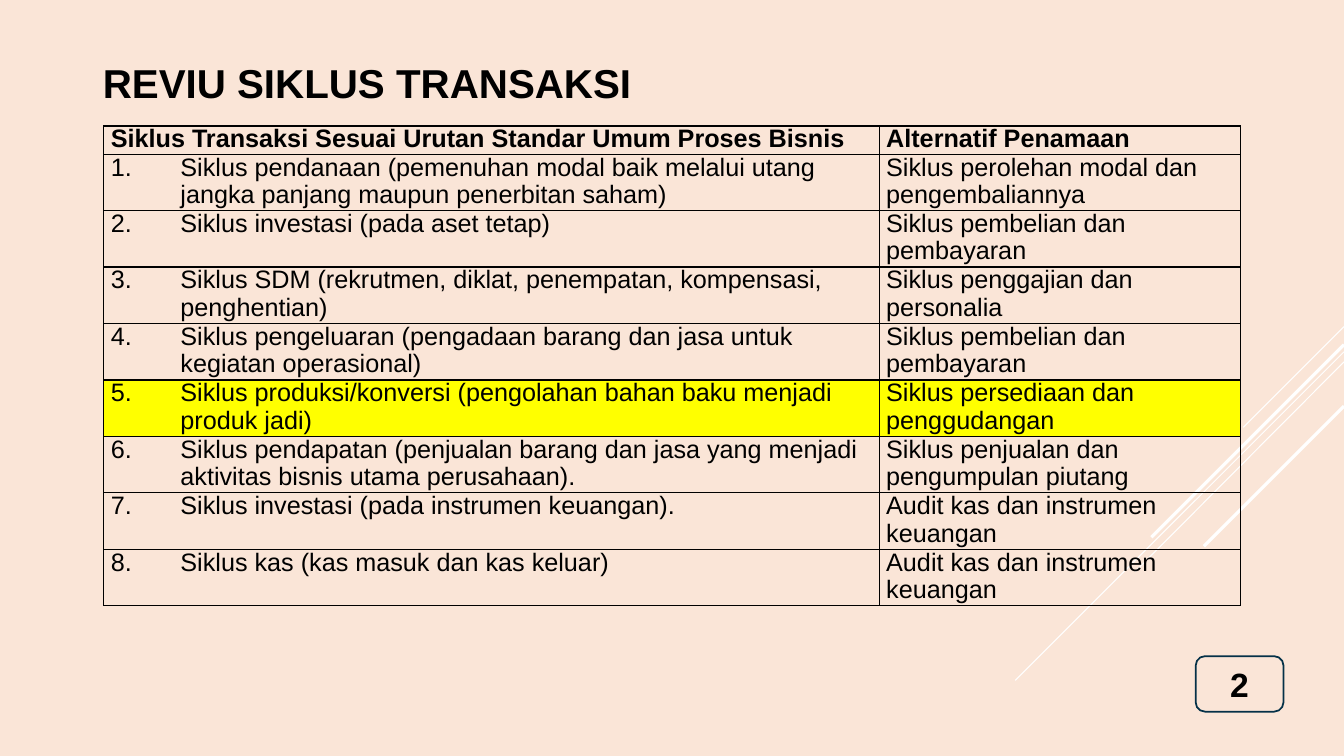
"""Build the slide reviewing the transaction cycles."""
from lxml.etree import SubElement
from pptx import Presentation
from pptx.dml.color import RGBColor
from pptx.enum.shapes import MSO_CONNECTOR as Connector, MSO_SHAPE as Shape
from pptx.enum.text import MSO_ANCHOR as Anchor, PP_ALIGN as Align
from pptx.oxml import parse_xml
from pptx.oxml.ns import nsdecls, qn
from pptx.util import Inches, Pt

COLORS = {
    "background": "FAE5D7",
    "ray": "FFFFFF",
    "badge line": "043148",
    "text": "000000",
    "highlight": "FFFF00",
}
HEADINGS = ("Siklus Transaksi Sesuai Urutan Standar Umum Proses Bisnis", "Alternatif Penamaan")
CYCLES = [
    ("Siklus pendanaan (pemenuhan modal baik melalui utang jangka panjang maupun penerbitan saham)",
     "Siklus perolehan modal dan pengembaliannya"),
    ("Siklus investasi (pada aset tetap)", "Siklus pembelian dan pembayaran"),
    ("Siklus SDM (rekrutmen, diklat, penempatan, kompensasi, penghentian)",
     "Siklus penggajian dan personalia"),
    ("Siklus pengeluaran (pengadaan barang dan jasa untuk kegiatan operasional)",
     "Siklus pembelian dan pembayaran"),
    ("Siklus produksi/konversi (pengolahan bahan baku menjadi produk jadi)",
     "Siklus persediaan dan penggudangan"),
    ("Siklus pendapatan (penjualan barang dan jasa yang menjadi aktivitas bisnis utama perusahaan).",
     "Siklus penjualan dan pengumpulan piutang"),
    ("Siklus investasi (pada instrumen keuangan).", "Audit kas dan instrumen keuangan"),
    ("Siklus kas (kas masuk dan kas keluar)", "Audit kas dan instrumen keuangan"),
]
HIGHLIGHTED_CYCLE = 5
RAYS = [
    (3.24, 12.33, 4.24, 0.75),
    (3.49, 10.07, 6.75, 0.75),
    (3.59, 11.26, 5.67, 0.75),
    (3.42, 11.42, 5.33, 2.25),
    (4.03, 11.94, 5.42, 2.25),
]


def color(name):
    return RGBColor.from_string(COLORS[name])


def style(paragraph, size, bold):
    font = paragraph.font
    font.name, font.size, font.bold = "Arial", Pt(size), bold
    font.color.rgb = color("text")


deck = Presentation()
deck.slide_width, deck.slide_height = Inches(13.33), Inches(7.5)
slide = deck.slides.add_slide(deck.slide_layouts[5])
slide.background.fill.solid()
slide.background.fill.fore_color.rgb = color("background")

for start_y, end_x, end_y, width in RAYS:
    ray = slide.shapes.add_connector(
        Connector.STRAIGHT, Inches(13.33), Inches(start_y), Inches(end_x), Inches(end_y))
    ray.line.color.rgb = color("ray")
    ray.line.width = Pt(width)
    SubElement(ray._element.spPr, qn("a:effectLst"))

page_badge = slide.shapes.add_shape(
    Shape.ROUNDED_RECTANGLE, Inches(11.86), Inches(6.51), Inches(0.87), Inches(0.55))
page_badge.shadow.inherit = False
page_badge.fill.solid()
page_badge.fill.fore_color.rgb = color("background")
page_badge.line.color.rgb = color("badge line")
page_badge.line.width = Pt(1.25)
page_badge.text_frame.text = "2"
page_badge.text_frame.vertical_anchor = Anchor.MIDDLE
page_number = page_badge.text_frame.paragraphs[0]
page_number.alignment = Align.CENTER
style(page_number, 24, True)

title = slide.shapes.title
title.left, title.top = Inches(0.92), Inches(0.51)
title.width, title.height = Inches(7.09), Inches(0.61)
title.text_frame.text = "REVIU SIKLUS TRANSAKSI"
title.text_frame.vertical_anchor = Anchor.MIDDLE
heading = title.text_frame.paragraphs[0]
heading.alignment = Align.LEFT
style(heading, 28.8, True)

rows = [HEADINGS, *CYCLES]
cycle_table = slide.shapes.add_table(
    len(rows), 2, Inches(1.03), Inches(1.25), Inches(11.27), Inches(4.76)).table
cycle_table.first_row = cycle_table.horz_banding = False
for column, width in zip(cycle_table.columns, (7.69, 3.58)):
    column.width = Inches(width)

for number, texts in enumerate(rows):
    cycle_table.rows[number].height = Inches(0.56 if number else 0.28)
    for column, text in enumerate(texts):
        cell = cycle_table.cell(number, column)
        cell.margin_left = cell.margin_right = Inches(0.07)
        cell.margin_top = cell.margin_bottom = 0
        cell.text = text
        entry = cell.text_frame.paragraphs[0]
        entry.line_spacing = 0.97
        style(entry, 18, number == 0)
        if number and column == 0:
            numbering = entry._p.get_or_add_pPr()
            numbering.set("marL", str(Inches(0.69)))
            numbering.set("indent", str(-Inches(0.69)))
            numbering.insert_element_before(
                parse_xml(f'<a:buAutoNum {nsdecls("a")} type="arabicPeriod" startAt="{number}"/>'),
                "a:tabLst", "a:defRPr", "a:extLst")
        for side in ("lnL", "lnR", "lnT", "lnB"):
            cell._tc.get_or_add_tcPr().append(parse_xml(
                f'<a:{side} {nsdecls("a")} w="{Pt(1)}"><a:solidFill>'
                f'<a:srgbClr val="{COLORS["text"]}"/></a:solidFill></a:{side}>'))
        if number == HIGHLIGHTED_CYCLE:
            cell.fill.solid()
            cell.fill.fore_color.rgb = color("highlight")
        else:
            cell.fill.background()

deck.save("out.pptx")
